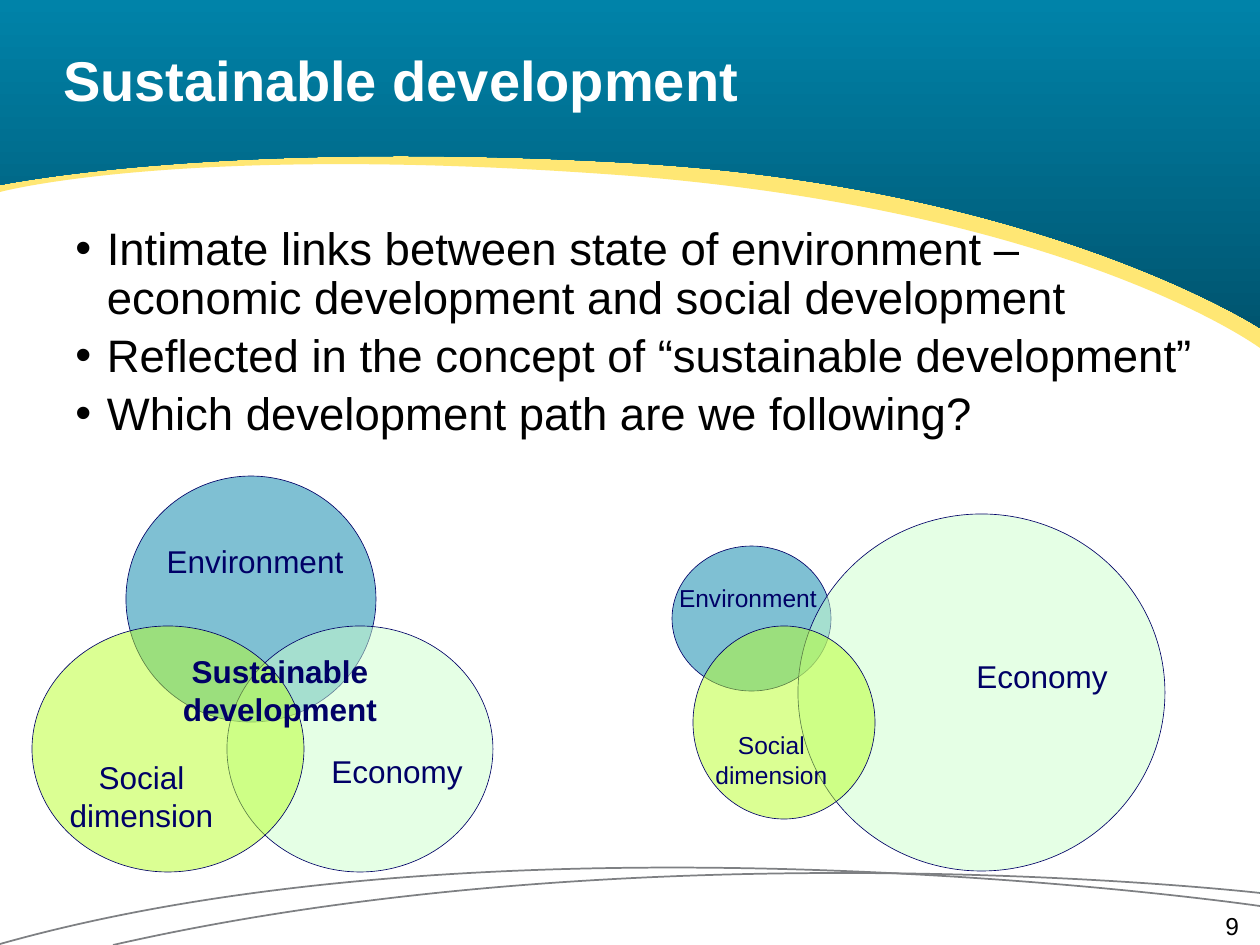
from lxml.etree import SubElement
from pptx import Presentation
from pptx.dml.color import RGBColor
from pptx.enum.shapes import MSO_SHAPE
from pptx.enum.text import MSO_ANCHOR, PP_ALIGN
from pptx.oxml.ns import qn
from pptx.util import Pt

# Content, lengths in px (126 to the inch)
W, H = 1260, 945
PX = 914400 / 126
BLUE, GREEN, LIME, NAVY = "0083A9", "CCFFCC", "B8FF29", "000066"
TITLE = "Sustainable development"
BULLETS = [
    "Intimate links between state of environment – economic development and social development",
    "Reflected in the concept of “sustainable development”",
    "Which development path are we following?",
]
# Each curve: start point, then cubic segments (control, control, end)
SWOOSHES = [
    [(W, 893), (W, 893), (649, 823), (113, H)],
    [(W, 906), (W, 906), (517, 798), (0, 944)],
]
YELLOW_EDGE = [(W, 348), (W, 348), (1076, 212), (631, 176), (185, 142), (0, 192), (0, 192)]
TEAL_EDGE = [(W, 328), (W, 328), (1041, 186), (631, 163), (220, 139), (0, 185), (0, 185)]
# Each Venn diagram: circles (box, colour), then labels (text, box, size, bold)
VENNS = [
    ([((126, 476, 250, 246), BLUE), ((227, 626, 266, 246), GREEN), ((32, 626, 272, 246), LIME)],
     [("Environment", (153, 536, 204, 50), 18, False),
      ("Social dimension", (52, 752, 179, 88), 18, False),
      ("Economy", (273, 746, 248, 50), 18, False),
      ("Sustainable development", (161, 646, 238, 89), 18, True)]),
    ([((672, 546, 159, 145), BLUE), ((798, 514, 367, 357), GREEN), ((693, 626, 182, 193), LIME)],
     [("Environment", (646, 577, 204, 43), 14, False),
      ("Social dimension", (682, 724, 179, 72), 14, False),
      ("Economy", (918, 651, 248, 50), 18, False)]),
]


def px(*values):
    return [round(v * PX) for v in values]


def rgb(color):
    return RGBColor.from_string(color)


def add_curve(s, curve, corners=()):
    """Cubic curve, closed through the corners if there are any."""
    start, *rest = [px(*p) for p in [*curve, *corners]]
    builder = s.shapes.build_freeform(*start, scale=1.0)
    builder.add_line_segments(rest, close=bool(corners))
    sp = builder.convert_to_shape()
    sp.shadow.inherit = False
    # Join every three line ends of the curve into one cubic segment
    lines = list(sp.element.iter(qn("a:lnTo")))[:len(curve) - 1]
    for i in range(0, len(lines), 3):
        cubic = lines[i].makeelement(qn("a:cubicBezTo"))
        lines[i].addprevious(cubic)
        for line in lines[i:i + 3]:
            cubic.append(line[0])
            line.getparent().remove(line)
    return sp


def add_circle(s, box, color):
    sp = s.shapes.add_shape(MSO_SHAPE.OVAL, *px(*box))
    sp.shadow.inherit = False
    sp.fill.solid()
    sp.fill.fore_color.rgb = rgb(color)
    fill = sp.element.spPr.find(qn("a:solidFill"))
    SubElement(fill[0], qn("a:alpha"), val="50000")
    sp.line.color.rgb = rgb(NAVY)
    sp.line.width = Pt(0.37)


def write(tf, texts, size, color="000000", bold=False, align=PP_ALIGN.LEFT,
          anchor=MSO_ANCHOR.TOP, inset=None):
    tf.word_wrap = True
    tf.vertical_anchor = anchor
    if inset is not None:
        tf.margin_left = tf.margin_top = tf.margin_right = tf.margin_bottom = inset
    for i, text in enumerate(texts):
        p = tf.add_paragraph() if i else tf.paragraphs[0]
        p.alignment = align
        r = p.add_run()
        r.text = text
        r.font.name, r.font.size, r.font.bold = "Arial", Pt(size), bold
        r.font.color.rgb = rgb(color)


def add_text(s, box, texts, size, **fmt):
    tf = s.shapes.add_textbox(*px(*box)).text_frame
    write(tf, texts, size, **fmt)
    return tf


prs = Presentation()
prs.slide_width, prs.slide_height = px(W, H)
s = prs.slides.add_slide(prs.slide_layouts[5])

# Swooshes at the foot
for curve in SWOOSHES:
    sp = add_curve(s, curve)
    sp.fill.background()
    sp.line.color.rgb = rgb("7E8083")
    sp.line.width = Pt(1)

# Header band: yellow edge under a teal gradient
yellow, teal = [add_curve(s, edge, corners=[(0, 0), (W, 0)])
                for edge in (YELLOW_EDGE, TEAL_EDGE)]
yellow.fill.solid()
yellow.fill.fore_color.rgb = rgb("FFE774")
teal.fill.gradient()
teal.fill.gradient_angle = 270
for stop, color, pos in zip(teal.fill.gradient_stops, (BLUE, "005570"), (0, 1)):
    stop.color.rgb = rgb(color)
    stop.position = pos
for band in (yellow, teal):
    band.line.fill.background()

# Title, brought in front of the band
title = s.shapes.title
title.left, title.top, title.width, title.height = px(63, 0, 1176, 158)
write(title.text_frame, [TITLE], 32, color="FFFFFF", bold=True,
      anchor=MSO_ANCHOR.MIDDLE, inset=0)
s.shapes.element.append(title.element)

# Bullets
tf = add_text(s, (63, 220, 1144, 210), BULLETS, 26)
indent = px(31.5)[0]
for p in tf.paragraphs:
    p.line_spacing = 0.9
    p.space_before = Pt(5)
    pPr = p._p.get_or_add_pPr()
    pPr.set("marL", str(indent))
    pPr.set("indent", str(-indent))
    SubElement(pPr, qn("a:buFont"), typeface="Arial")
    SubElement(pPr, qn("a:buChar"), char="•")

# Venn diagrams
for circles, labels in VENNS:
    for box, color in circles:
        add_circle(s, box, color)
    for text, box, size, bold in labels:
        add_text(s, box, [text], size, color=NAVY, bold=bold, align=PP_ALIGN.CENTER)

# Page number
add_text(s, (945, 911, 294, 23), ["9"], 14, align=PP_ALIGN.RIGHT, inset=0)

prs.save("out.pptx")
